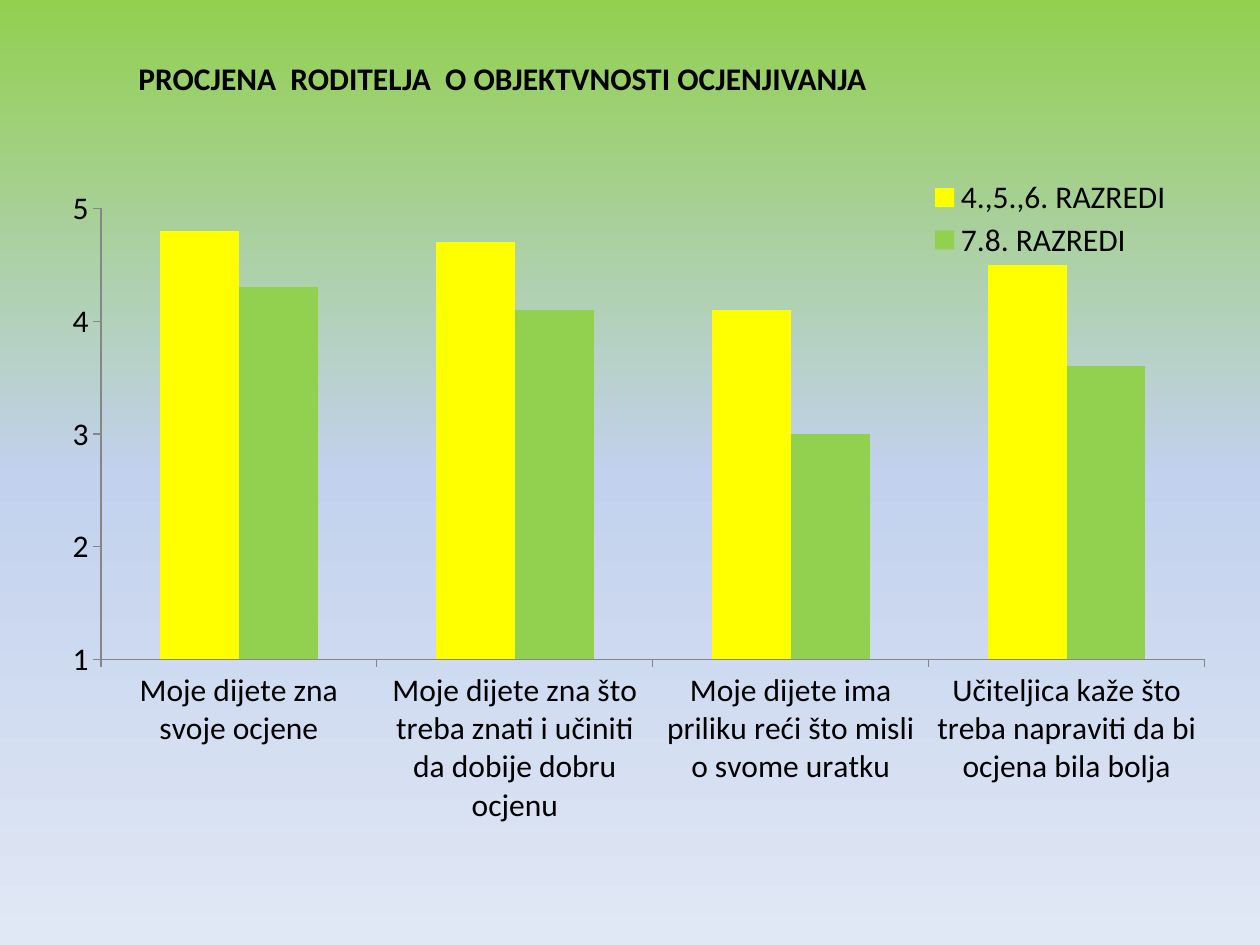
from copy import deepcopy

from lxml import etree
from pptx import Presentation
from pptx.chart.data import CategoryChartData
from pptx.dml.color import RGBColor
from pptx.enum.chart import XL_CHART_TYPE, XL_LEGEND_POSITION, XL_TICK_MARK
from pptx.enum.text import MSO_AUTO_SIZE
from pptx.oxml.ns import qn
from pptx.util import Inches, Pt

COLUMN = XL_CHART_TYPE.COLUMN_CLUSTERED
RIGHT = XL_LEGEND_POSITION.RIGHT
OUTSIDE = XL_TICK_MARK.OUTSIDE
GROW = MSO_AUTO_SIZE.SHAPE_TO_FIT_TEXT


def color(code):
    return RGBColor.from_string(code)


def place(parent, index, box, inner=False):
    """Give a chart part a fixed place, in fractions of the chart."""
    old = parent.find(qn("c:layout"))
    if old is not None:
        parent.remove(old)
    layout = etree.Element(qn("c:layout"))
    manual = etree.SubElement(layout, qn("c:manualLayout"))
    items = [("layoutTarget", "inner")] if inner else []
    items += [("xMode", "edge"), ("yMode", "edge")]
    items += zip("xywh", box)
    for tag, value in items:
        etree.SubElement(manual, qn("c:" + tag)).set("val", str(value))
    parent.insert(index, layout)


deck = Presentation()
deck.slide_width = Inches(10)
deck.slide_height = Inches(7.5)
slide = deck.slides.add_slide(deck.slide_layouts[6])

# Background: three colours from top to bottom
fill = slide.background.fill
fill.gradient()
fill.gradient_angle = 270
stops = slide.element.find(".//" + qn("a:gsLst"))
stops.insert(1, deepcopy(stops[0]))
shades = [(0, "92D050"), (0.5, "C2D1ED"), (1, "E1E8F5")]
for stop, (pos, code) in zip(fill.gradient_stops, shades):
    stop.position = pos
    stop.color.rgb = color(code)

# Chart data
data = CategoryChartData()
data.categories = [
    "Moje dijete zna svoje ocjene",
    "Moje dijete zna što treba znati i učiniti da dobije dobru ocjenu",
    "Moje dijete ima priliku reći što misli o svome uratku",
    "Učiteljica kaže što treba napraviti da bi ocjena bila bolja",
]
data.add_series("4.,5.,6. RAZREDI", [4.8, 4.7, 4.1, 4.5])
data.add_series("7.8. RAZREDI", [4.3, 4.1, 3, 3.6])

# Column chart
chart = slide.shapes.add_chart(COLUMN, Inches(0.33), Inches(1.33),
                               Inches(9.42), Inches(5.42), data).chart
chart.has_title = False
chart.font.name = "Calibri"
chart.font.size = Pt(18)
chart.font.color.rgb = color("000000")
plot = chart.plots[0]
plot.gap_width = 150
plot.overlap = 0
plot.vary_by_categories = False
for series, code in zip(plot.series, ["FFFF00", "92D050"]):
    series.format.fill.solid()
    series.format.fill.fore_color.rgb = color(code)
area = chart.element.find(".//" + qn("c:plotArea"))
place(area, 0, (0.05, 0.06, 0.93, 0.66), inner=True)

# Axes
for axis in (chart.category_axis, chart.value_axis):
    axis.has_major_gridlines = False
    axis.major_tick_mark = OUTSIDE
    axis.format.line.color.rgb = color("868686")
    axis.format.line.width = Pt(0.75)
scale = chart.value_axis
scale.minimum_scale = 1
scale.maximum_scale = 5
scale.major_unit = 1
scale.tick_labels.number_format = "General"
scale.tick_labels.number_format_is_linked = False

# Legend over the plot
chart.has_legend = True
legend = chart.legend
legend.position = RIGHT
legend.include_in_layout = True
place(chart.element.find(".//" + qn("c:legend")), 1, (0.74, 0.01, 0.22, 0.13))

# Heading
box = slide.shapes.add_textbox(Inches(1), Inches(0.42), Inches(8.33), Inches(0.4))
frame = box.text_frame
frame.word_wrap = True
frame.auto_size = GROW
frame.text = "PROCJENA  RODITELJA  O OBJEKTVNOSTI OCJENJIVANJA"
font = frame.paragraphs[0].runs[0].font
font.name = "Calibri"
font.size = Pt(18)
font.bold = True
font.color.rgb = color("000000")

deck.save("out.pptx")
